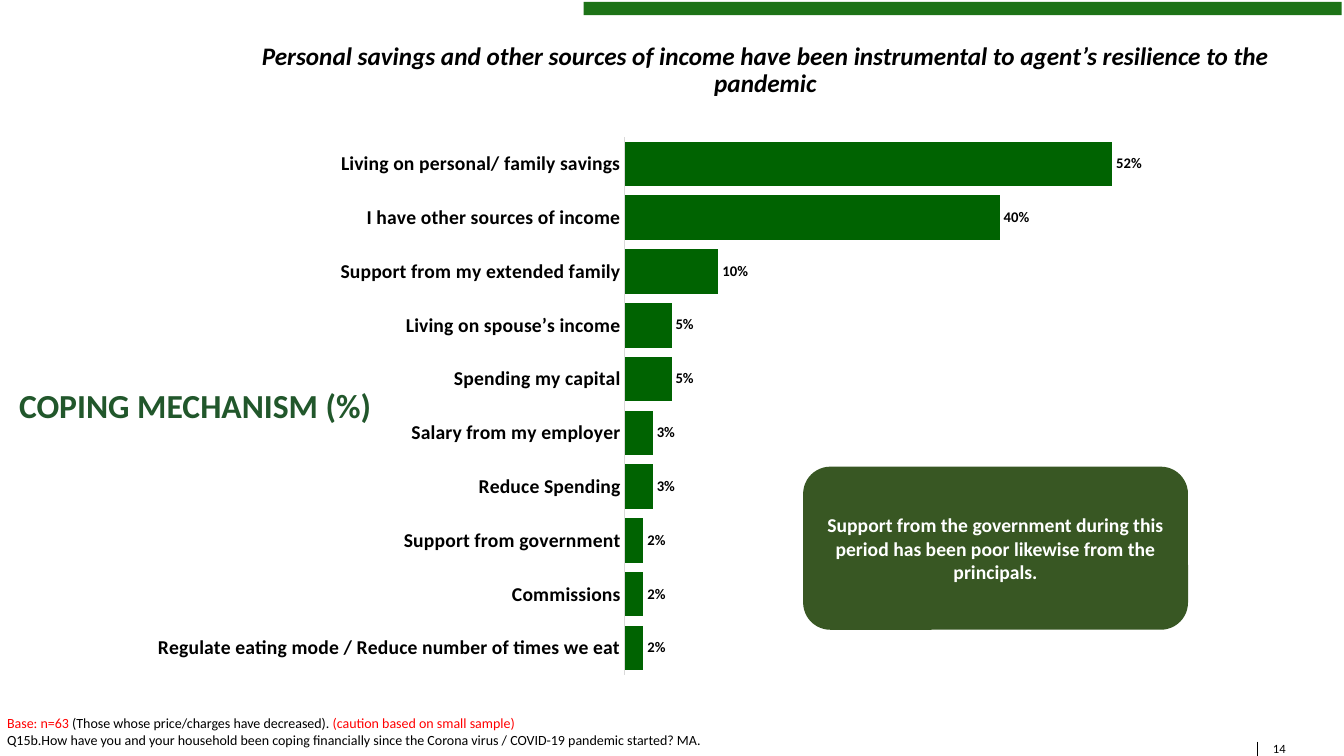
from lxml import etree
from pptx import Presentation
from pptx import util as u
from pptx.chart.data import CategoryChartData
from pptx.dml.color import RGBColor
from pptx.enum import chart as charts, shapes, text
from pptx.oxml import parse_xml
from pptx.oxml.ns import nsdecls, qn

# Content
TITLE = ("Personal savings and other sources of income have been instrumental "
         "to agent’s resilience to the pandemic")
HEADING = "COPING MECHANISM (%)"
CALLOUT = ("Support from the government during this period has been poor "
           "likewise from the principals.")
PAGE_NUMBER = "14"
COPING = [
    ("Living on personal/ family savings", 0.52),
    ("I have other sources of income", 0.40),
    ("Support from my extended family", 0.10),
    ("Living on spouse’s income", 0.05),
    ("Spending my capital", 0.05),
    ("Salary from my employer", 0.03),
    ("Reduce Spending", 0.03),
    ("Support from government", 0.02),
    ("Commissions", 0.02),
    ("Regulate eating mode / Reduce number of times we eat", 0.02),
]
RED, BLACK, WHITE = "FF0000", "000000", "FFFFFF"
FOOTNOTE = [
    [("Base: n=63 ", RED),
     ("(Those whose price/charges have decreased). ", BLACK),
     ("(caution based on small sample)", RED)],
    [("Q15b.How have you and your household been coping financially since the "
      "Corona virus / COVID-19 pandemic started? MA.", BLACK)],
]
FONT = "Calibri"
PLOT = {"x": 0.5, "y": 0.018, "w": 0.5, "h": 0.965}


def color(value):
    return RGBColor.from_string(value)


def box(left, top, width, height):
    return [u.Cm(value) for value in (left, top, width, height)]


def set_font(font, size, fill=BLACK, bold=False, italic=False):
    font.name, font.size = FONT, u.Pt(size)
    font.bold, font.italic = bold, italic
    font.color.rgb = color(fill)


def set_frame(shape, margins, anchor=text.MSO_ANCHOR.TOP, wrap=True):
    frame = shape.text_frame
    frame.word_wrap, frame.vertical_anchor = wrap, anchor
    frame.margin_left = frame.margin_right = u.Cm(margins[0])
    frame.margin_top = frame.margin_bottom = u.Cm(margins[1])
    return frame


def write(frame, content, align=text.PP_ALIGN.LEFT, **style):
    paragraph = frame.paragraphs[0]
    paragraph.text, paragraph.alignment = content, align
    set_font(paragraph.font, **style)
    return paragraph


def add_block(kind, place, fill):
    shape = slide.shapes.add_shape(kind, *box(*place))
    shape.shadow.inherit = False
    shape.fill.solid()
    shape.fill.fore_color.rgb = color(fill)
    shape.line.fill.background()
    return shape


presentation = Presentation()
presentation.slide_width, presentation.slide_height = u.Cm(33.87), u.Cm(19.05)
slide = presentation.slides.add_slide(presentation.slide_layouts[6])

# Top band, page number and its divider
add_block(shapes.MSO_SHAPE.RECTANGLE, (14.71, 0.05, 19.1, 0.33), "1D7317")
page = slide.shapes.add_textbox(*box(32.08, 18.67, 0.38, 0.38))
write(set_frame(page, (0, 0), wrap=False), PAGE_NUMBER, size=9)
divider = slide.shapes.add_connector(
    shapes.MSO_CONNECTOR.STRAIGHT, *box(31.7, 18.69, 31.7, 19.05))
divider.line.color.rgb, divider.line.width = color(BLACK), u.Pt(0.75)
etree.SubElement(divider._element.spPr, qn("a:effectLst"))

# Bar chart
data = CategoryChartData(number_format="0%")
data.categories = [name for name, share in COPING]
data.add_series("Series 1", [share for name, share in COPING])
chart = slide.shapes.add_chart(
    charts.XL_CHART_TYPE.BAR_CLUSTERED, *box(1.57, 3.2, 28.35, 14.05), data).chart
chart.has_legend = chart.has_title = False
set_font(chart.font, 10)

category_axis = chart.category_axis
category_axis.reverse_order = True
category_axis.major_tick_mark = charts.XL_TICK_MARK.NONE
category_axis.format.line.color.rgb = color("D9D9D9")
category_axis.format.line.width = u.Pt(0.75)
set_font(category_axis.tick_labels.font, 14, bold=True)

value_axis = chart.value_axis
value_axis.minimum_scale, value_axis.maximum_scale = 0, 0.6
value_axis.has_major_gridlines = value_axis.visible = False

bars = chart.plots[0]
bars.gap_width, bars.overlap, bars.vary_by_categories = 21, 6, False
series = bars.series[0]
series.format.fill.solid()
series.format.fill.fore_color.rgb = color("006301")
labels = series.data_labels
labels.show_value = True
labels.position = charts.XL_LABEL_POSITION.OUTSIDE_END
labels.number_format, labels.number_format_is_linked = "0%", False
set_font(labels.font, 10.5, bold=True)

# Fixed inner plot area
plot_area = chart._chartSpace.chart.plotArea
for old_layout in plot_area.findall(qn("c:layout")):
    plot_area.remove(old_layout)
sizes = "".join(f'<c:{key} val="{value}"/>' for key, value in PLOT.items())
plot_area.insert(0, parse_xml(
    f'<c:layout {nsdecls("c")}><c:manualLayout><c:layoutTarget val="inner"/>'
    f'<c:xMode val="edge"/><c:yMode val="edge"/>{sizes}'
    '</c:manualLayout></c:layout>'))

# Title
title = slide.shapes.add_textbox(*box(5.74, 1.22, 27.1, 1.14))
paragraph = write(set_frame(title, (0, 0), text.MSO_ANCHOR.MIDDLE), TITLE,
                  text.PP_ALIGN.CENTER, size=18, bold=True, italic=True)
paragraph.line_spacing = 0.9

# Callout
callout = add_block(shapes.MSO_SHAPE.ROUNDED_RECTANGLE,
                    (20.24, 11.76, 9.7, 4.11), "385723")
write(set_frame(callout, (0.25, 0.13), text.MSO_ANCHOR.MIDDLE), CALLOUT,
      text.PP_ALIGN.CENTER, size=14, fill=WHITE, bold=True)

# Footnote
footnote = slide.shapes.add_textbox(*box(0, 17.91, 23.67, 1.04))
frame = set_frame(footnote, (0.18, 0.1))
for index, parts in enumerate(FOOTNOTE):
    paragraph = frame.add_paragraph() if index else frame.paragraphs[0]
    for content, fill in parts:
        run = paragraph.add_run()
        run.text = content
        set_font(run.font, 10, fill)

# Chart heading
heading = slide.shapes.add_textbox(*box(0.23, 9.58, 9.5, 1.27))
write(set_frame(heading, (0.25, 0.13)), HEADING, size=24, fill="21572B", bold=True)

presentation.save("out.pptx")
